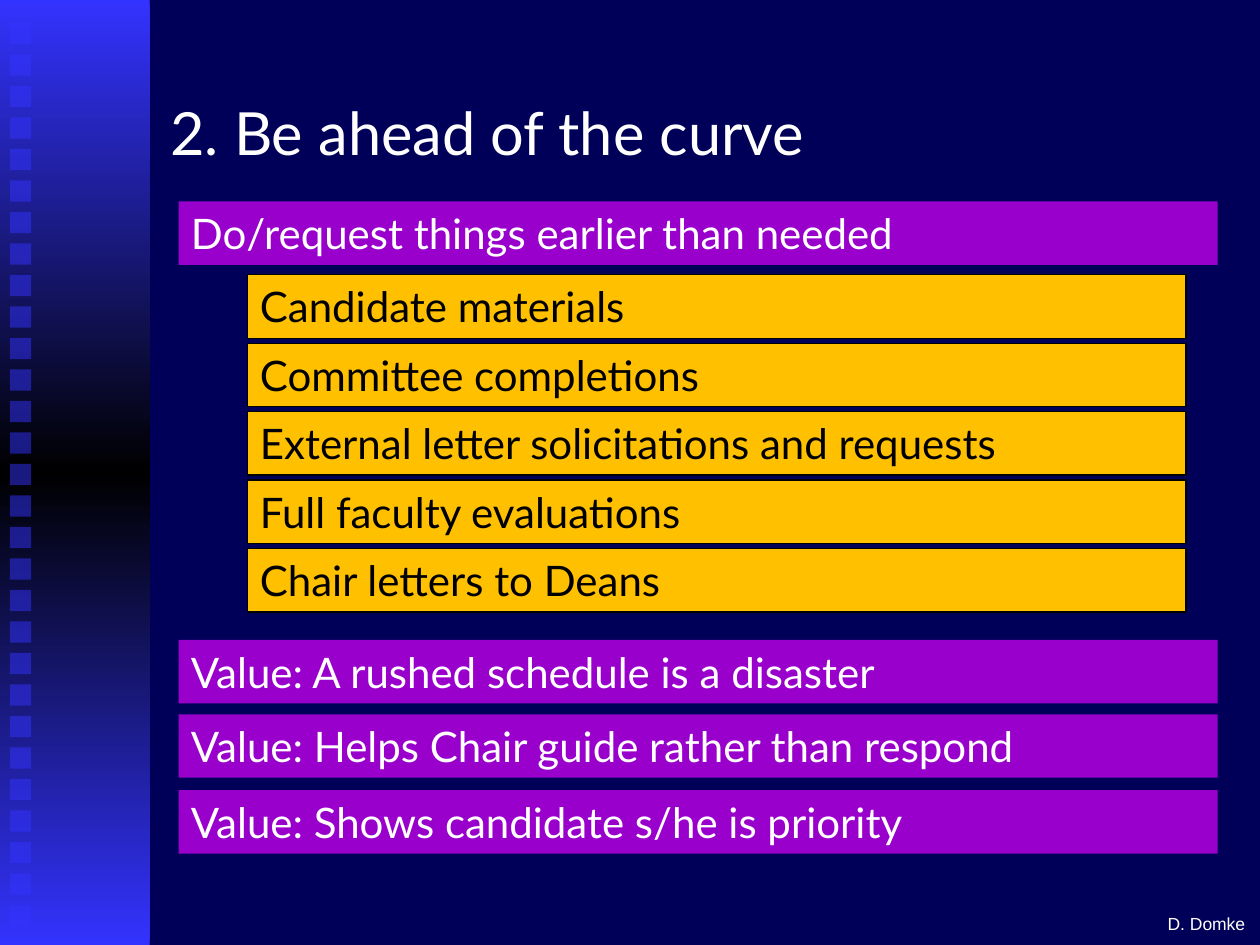
import copy
import pptx
import pptx.dml.color
import pptx.enum.shapes
import pptx.enum.text
import pptx.oxml
import pptx.oxml.ns
import pptx.util

Cm = pptx.util.Cm
Pt = pptx.util.Pt
ANCHOR = pptx.enum.text.MSO_ANCHOR

TITLE = "2. Be ahead of the curve"
AUTHOR = "D. Domke"
MAIN_POINTS = [
    (4.06, "Do/request things earlier than needed"),
    (12.9, "Value: A rushed schedule is a disaster"),
    (14.4, "Value: Helps Chair guide rather than respond"),
    (15.93, "Value: Shows candidate s/he is priority"),
]
EARLY_TASKS = [
    "Candidate materials",
    "Committee completions",
    "External letter solicitations and requests",
    "Full faculty evaluations",
    "Chair letters to Deans",
]
NAVY, BLUE, PURPLE, AMBER = "000058", "3333FF", "9900CC", "FFC000"
BLACK, WHITE = "000000", "FFFFFF"
BAR_HEIGHT = 1.28
TASK_TOP, TASK_PITCH = 5.54, 1.38
SQUARE_COUNT, FIRST_SQUARE, LAST_SQUARE = 29, 0.46, 18.24


def paint(color_format, color):
    color_format.rgb = pptx.dml.color.RGBColor.from_string(color)


def fill_solid(fill, color):
    fill.solid()
    paint(fill.fore_color, color)


def add_rectangle(page, left, top, width, height, color, line=None):
    box = page.shapes.add_shape(
        pptx.enum.shapes.MSO_SHAPE.RECTANGLE, Cm(left), Cm(top), Cm(width), Cm(height)
    )
    box.shadow.inherit = False
    fill_solid(box.fill, color)
    if line:
        fill_solid(box.line.fill, line)
        box.line.width = Pt(0.75)
    else:
        box.line.fill.background()
    return box


def write(box, text, size, color, font="Lato", anchor=ANCHOR.MIDDLE, wrap=True):
    frame = box.text_frame
    frame.text = text
    frame.word_wrap = wrap
    frame.auto_size = pptx.enum.text.MSO_AUTO_SIZE.NONE
    frame.vertical_anchor = anchor
    para = frame.paragraphs[0]
    para.alignment = pptx.enum.text.PP_ALIGN.LEFT
    para.font.name = font
    para.font.size = Pt(size)
    paint(para.font.color, color)


def add_side_band(page):
    band = add_rectangle(page, 0, 0, 3.02, 19.05, BLUE)
    band.fill.gradient()
    band.fill.gradient_angle = 90
    stops = band._element.spPr.find(".//" + pptx.oxml.ns.qn("a:gsLst"))
    stops.insert(1, copy.deepcopy(stops[0]))
    for stop, position, color in zip(
        band.fill.gradient_stops, (0, 0.5, 1), (BLUE, BLACK, BLUE)
    ):
        stop.position = position
        paint(stop.color, color)
    pitch = (LAST_SQUARE - FIRST_SQUARE) / (SQUARE_COUNT - 1)
    for index in range(SQUARE_COUNT):
        square = add_rectangle(page, 0.2, FIRST_SQUARE + index * pitch, 0.43, 0.43, BLUE)
        color = square._element.spPr.find(".//" + pptx.oxml.ns.qn("a:srgbClr"))
        alpha = color.makeelement(pptx.oxml.ns.qn("a:alpha"), {"val": "50000"})
        color.append(alpha)


def main():
    deck = pptx.Presentation()
    deck.slide_width, deck.slide_height = Cm(25.4), Cm(19.05)
    page = deck.slides.add_slide(deck.slide_layouts.get_by_name("Title Only"))
    fill_solid(page.background.fill, NAVY)
    add_side_band(page)

    title = page.shapes.title
    title.left, title.top, title.width, title.height = map(Cm, (3.18, 1.07, 22.22, 3.18))
    write(title, TITLE, 34, WHITE)

    for top, text in MAIN_POINTS:
        write(add_rectangle(page, 3.6, top, 20.95, BAR_HEIGHT, PURPLE), text, 24, WHITE)
    for index, text in enumerate(EARLY_TASKS):
        top = TASK_TOP + index * TASK_PITCH
        bar = add_rectangle(page, 4.99, top, 18.92, BAR_HEIGHT, AMBER, BLACK)
        write(bar, text, 24, BLACK, anchor=ANCHOR.TOP)

    author = page.shapes.add_textbox(Cm(23.29), Cm(18.29), Cm(2.11), Cm(0.68))
    write(author, AUTHOR, 10, WHITE, "Arial", ANCHOR.TOP, wrap=False)
    deck.save("out.pptx")


if __name__ == "__main__":
    main()
